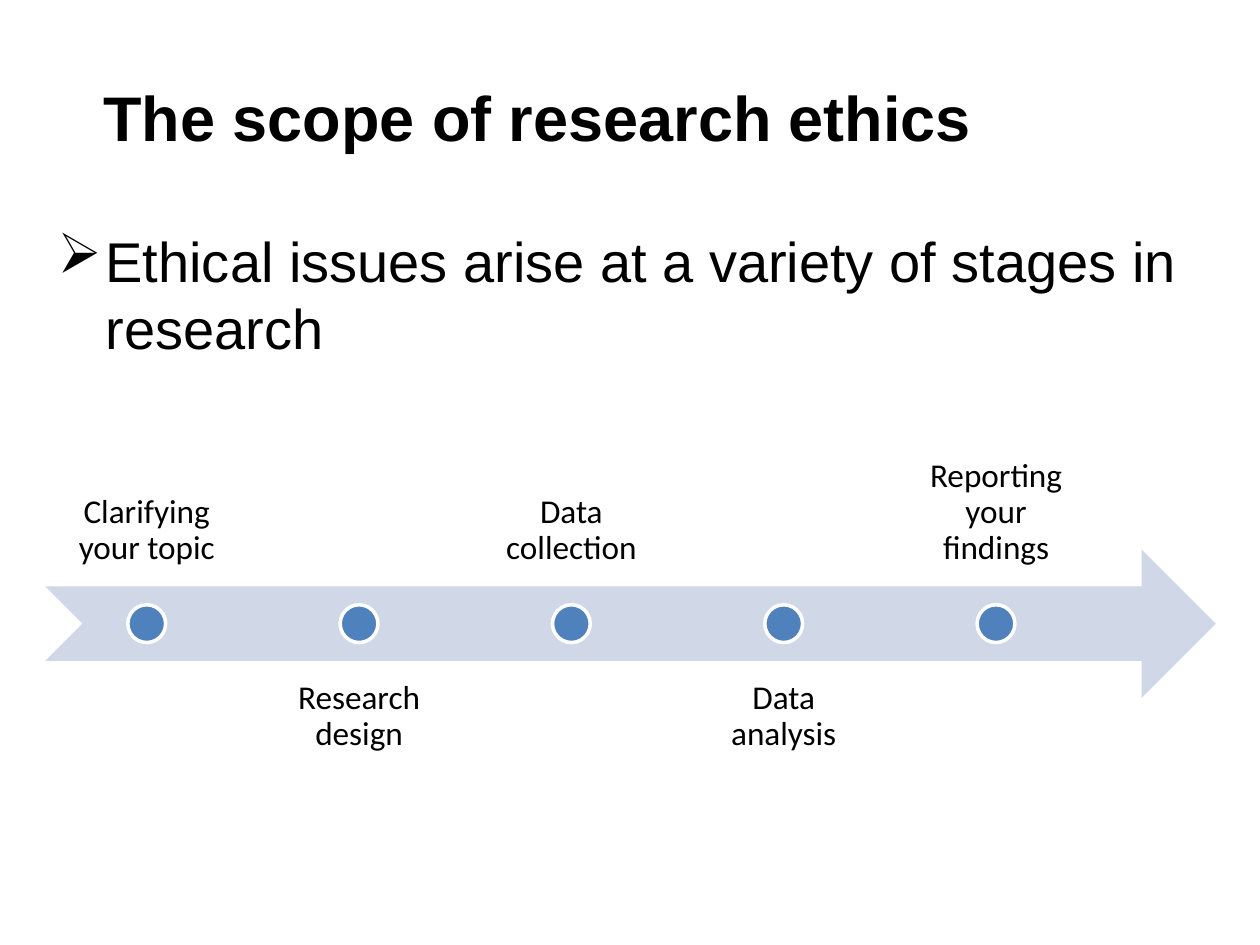
from dataclasses import dataclass
from lxml.etree import SubElement
from pptx import Presentation
from pptx.dml.color import RGBColor
from pptx.enum.shapes import MSO_SHAPE as Shape
from pptx.enum.text import MSO_ANCHOR as Anchor, PP_ALIGN as Align
from pptx.oxml.ns import qn
from pptx.util import Inches, Pt

TITLE = "The scope of research ethics"
POINT = "Ethical issues arise at a variety of stages in research"
STAGES = ["Clarifying your topic", "Research design", "Data collection",
          "Data analysis", "Reporting your findings"]


@dataclass(frozen=True)
class Theme:
    ink: str = "000000"
    arrow: str = "D0D8E8"
    dot: str = "4F81BD"
    ring: str = "FFFFFF"
    head: str = "Arial"
    label: str = "Calibri"
    title: int = 36
    body: int = 32
    stage: int = 19


THEME = Theme()
LEFT, WIDTH = 0.36, 9.29
BAND, HIGH = 4.36, 1.18      # top and height of the arrow
STEP, WIDE = 1.685, 1.61     # column pitch and label width
DOT, PAD = 0.3, 0.15
MID = BAND + HIGH / 2
RISE = 0.3                   # gap from the arrow's middle line to a label


def place(shape, left, top, width, height):
    shape.left, shape.top = Inches(left), Inches(top)
    shape.width, shape.height = Inches(width), Inches(height)


def write(para, text, size, face, bold=False):
    run = para.add_run()
    run.text = text
    font = run.font
    font.size, font.name, font.bold = Pt(size), face, bold
    font.color.rgb = RGBColor.from_string(THEME.ink)


def add_text(slide, left, top, width, height):
    box = slide.shapes.add_textbox(*map(Inches, (left, top, width, height)))
    box.text_frame.word_wrap = True
    return box.text_frame


def add_form(slide, kind, left, top, width, height, fill):
    form = slide.shapes.add_shape(kind, *map(Inches, (left, top, width, height)))
    form.shadow.inherit = False
    form.fill.solid()
    form.fill.fore_color.rgb = RGBColor.from_string(fill)
    form.line.fill.background()
    return form


def add_title(slide):
    title = slide.shapes.title
    place(title, 0.72, 0.3, 8.78, 1.25)
    title.text_frame.vertical_anchor = Anchor.MIDDLE
    para = title.text_frame.paragraphs[0]
    para.alignment = Align.LEFT
    write(para, TITLE, THEME.title, THEME.head, True)


def add_point(slide):
    para = add_text(slide, LEFT, 1.75, WIDTH, 2.53).paragraphs[0]
    props = para._p.get_or_add_pPr()
    props.set("marL", str(Inches(0.38)))
    props.set("indent", str(-Inches(0.38)))
    SubElement(props, qn("a:buChar"), char="➢")
    write(para, POINT, THEME.body, THEME.head)


def add_stage(slide, index, text):
    """Put a label above or below the arrow, in turn, and its dot on it."""
    left = LEFT + index * STEP
    above = index % 2 == 0
    top = MID - RISE - HIGH if above else MID + RISE
    frame = add_text(slide, left, top, WIDE, HIGH)
    frame.vertical_anchor = Anchor.BOTTOM if above else Anchor.TOP
    frame.margin_left = frame.margin_right = Inches(PAD)
    frame.margin_top = frame.margin_bottom = Inches(PAD)
    para = frame.paragraphs[0]
    para.alignment, para.line_spacing = Align.CENTER, 0.9
    write(para, text, THEME.stage, THEME.label)

    dot = add_form(slide, Shape.OVAL, left + (WIDE - DOT) / 2, MID - DOT / 2,
                   DOT, DOT, THEME.dot)
    dot.line.color.rgb = RGBColor.from_string(THEME.ring)
    dot.line.width = Pt(2)


def main():
    deck = Presentation()
    deck.slide_width, deck.slide_height = Inches(10), Inches(7.5)
    slide = deck.slides.add_slide(deck.slide_layouts[5])
    add_title(slide)
    add_point(slide)
    add_form(slide, Shape.NOTCHED_RIGHT_ARROW, LEFT, BAND, WIDTH, HIGH, THEME.arrow)
    for index, text in enumerate(STAGES):
        add_stage(slide, index, text)
    deck.save("out.pptx")


if __name__ == "__main__":
    main()
